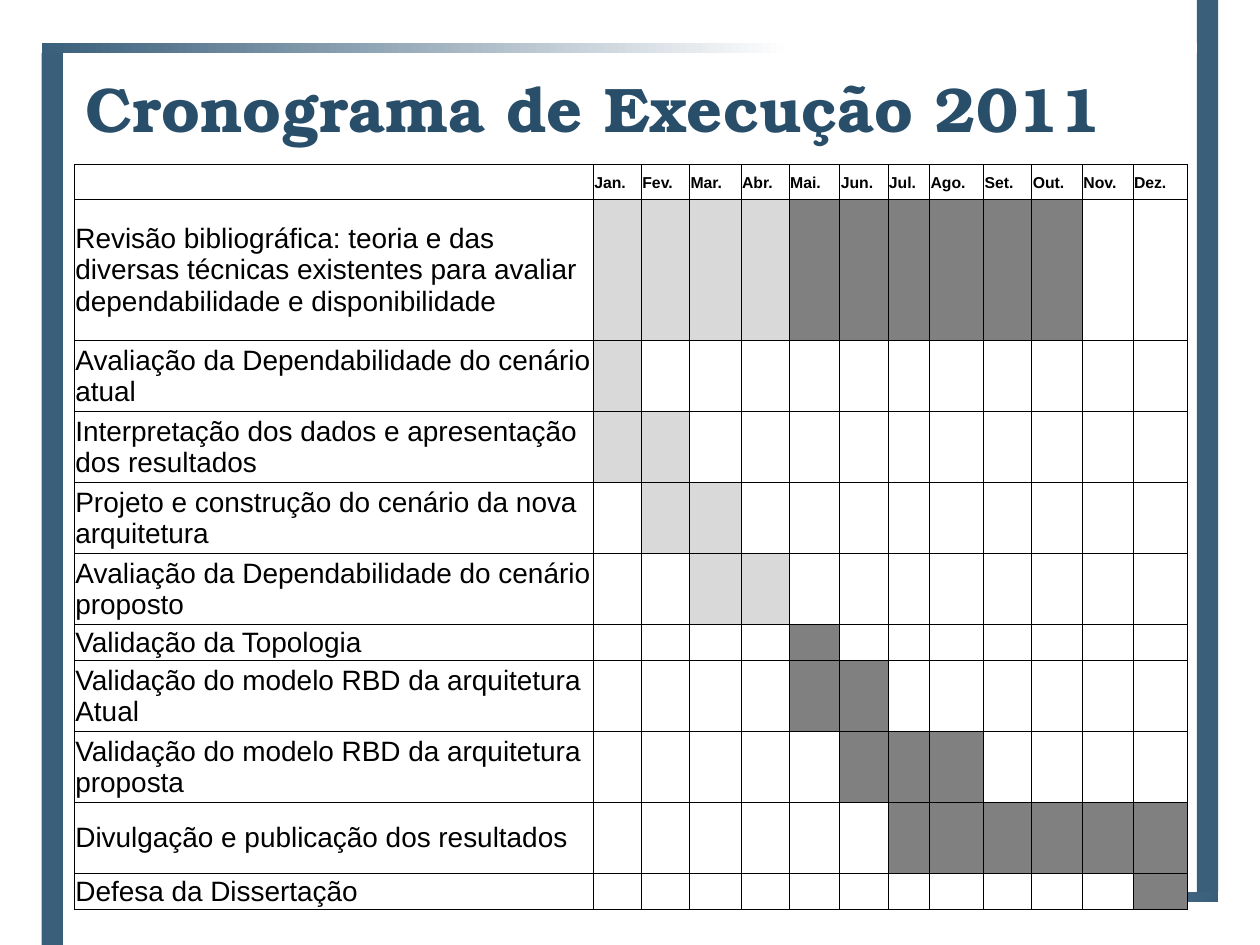
from lxml.etree import SubElement
from pptx import Presentation
from pptx.dml.color import RGBColor
from pptx.enum.shapes import MSO_SHAPE
from pptx.enum.text import MSO_ANCHOR, PP_ALIGN
from pptx.oxml import parse_xml
from pptx.oxml.ns import nsdecls, qn
from pptx.util import Cm, Pt

BLUE = RGBColor(0x3A, 0x5F, 0x7B)
TITLE_BLUE = RGBColor(0x28, 0x4E, 0x6A)
WHITE = RGBColor(0xFF, 0xFF, 0xFF)
BLACK = RGBColor(0x00, 0x00, 0x00)
DONE = RGBColor(0xD9, 0xD9, 0xD9)
PLANNED = RGBColor(0x80, 0x80, 0x80)

TITLE = "Cronograma de Execução 2011"
MONTHS = ["Jan.", "Fev.", "Mar.", "Abr.", "Mai.", "Jun.",
          "Jul.", "Ago.", "Set.", "Out.", "Nov.", "Dez."]
LAST_DONE_MONTH = 4
TASKS = [
    ("Revisão bibliográfica: teoria e das diversas técnicas existentes para "
     "avaliar dependabilidade e disponibilidade", 1, 10, 2.84),
    ("Avaliação da Dependabilidade do cenário atual", 1, 1, 1.43),
    ("Interpretação dos dados e apresentação dos resultados", 1, 2, 1.43),
    ("Projeto e construção do cenário da nova arquitetura", 2, 3, 1.43),
    ("Avaliação da Dependabilidade do cenário proposto", 3, 4, 1.43),
    ("Validação da Topologia", 5, 5, 0.73),
    ("Validação do modelo RBD da arquitetura Atual", 5, 6, 1.43),
    ("Validação do modelo RBD da arquitetura proposta", 6, 8, 1.43),
    ("Divulgação e publicação dos resultados", 7, 12, 1.43),
    ("Defesa da Dissertação", 12, 12, 0.73),
]
HEADER_HEIGHT = 0.7
COLUMN_WIDTHS = [10.46, 0.97, 0.97, 1.04, 0.97, 1.02, 0.97,
                 0.84, 1.09, 0.97, 1.02, 1.02, 1.09]
SIDE_BARS = [(24.13, 0), (0.84, 1.07)]
FADING_BARS = [(1.27, 17.98, 180), (0.84, 0.86, 0)]


def add_bar(page, left, top, width, height, angle=None):
    bar = page.shapes.add_shape(MSO_SHAPE.RECTANGLE, Cm(left), Cm(top),
                                Cm(width), Cm(height))
    bar.shadow.inherit = False
    bar.line.fill.background()
    if angle is None:
        bar.fill.solid()
        bar.fill.fore_color.rgb = BLUE
        return
    bar.fill.gradient()
    bar.fill.gradient_angle = angle
    for stop, color, position in zip(bar.fill.gradient_stops, (BLUE, WHITE), (0, 0.65)):
        stop.color.rgb = color
        stop.position = position


def add_title(page):
    box = page.shapes.title
    box.left, box.top, box.width, box.height = Cm(1.47), Cm(1.27), Cm(22.43), Cm(3)
    frame = box.text_frame
    frame.word_wrap = True
    frame.vertical_anchor = MSO_ANCHOR.TOP
    para = frame.paragraphs[0]
    para.alignment = PP_ALIGN.LEFT
    add_span(para, TITLE, 36, True, "TeX Gyre Bonum", TITLE_BLUE)


def add_span(para, text, size, bold, font="Arial", color=BLACK):
    span = para.add_run()
    span.text = text
    span.font.size = Pt(size)
    span.font.bold = bold
    span.font.name = font
    span.font.color.rgb = color


def format_cell(cell, text, size, bold, color):
    cell.margin_left = cell.margin_top = Cm(0.02)
    cell.margin_right = cell.margin_bottom = 0
    cell.vertical_anchor = MSO_ANCHOR.MIDDLE
    properties = cell._tc.get_or_add_tcPr()
    for side in ("lnL", "lnR", "lnT", "lnB"):
        properties.append(parse_xml(
            f'<a:{side} {nsdecls("a")} w="6350"><a:solidFill>'
            f'<a:srgbClr val="{BLACK}"/></a:solidFill></a:{side}>'))
    cell.fill.solid()
    cell.fill.fore_color.rgb = color
    para = cell.text_frame.paragraphs[0]
    if text:
        add_span(para, text, size, bold)
    else:
        SubElement(para._p, qn("a:endParaRPr"), sz=str(size * 100))


def month_color(month, first, last):
    if not first <= month <= last:
        return WHITE
    return DONE if month <= LAST_DONE_MONTH else PLANNED


def add_schedule(page):
    heights = [HEADER_HEIGHT] + [task[3] for task in TASKS]
    table = page.shapes.add_table(
        len(heights), len(COLUMN_WIDTHS), Cm(1.5), Cm(3.32),
        Cm(sum(COLUMN_WIDTHS)), Cm(sum(heights))).table
    table.first_row = table.horz_banding = False
    for column, width in zip(table.columns, COLUMN_WIDTHS):
        column.width = Cm(width)
    for row, height in zip(table.rows, heights):
        row.height = Cm(height)
    for index, text in enumerate([""] + MONTHS):
        format_cell(table.cell(0, index), text, 9, True, WHITE)
    for row, (task, first, last, height) in enumerate(TASKS, 1):
        format_cell(table.cell(row, 0), task, 16, False, WHITE)
        for month in range(1, len(MONTHS) + 1):
            format_cell(table.cell(row, month), "", 9, False,
                        month_color(month, first, last))


def main():
    deck = Presentation()
    deck.slide_width, deck.slide_height = Cm(25.4), Cm(19.05)
    page = deck.slides.add_slide(deck.slide_layouts[5])
    for left, top in SIDE_BARS:
        add_bar(page, left, top, 0.43, 17.98)
    for left, top, angle in FADING_BARS:
        add_bar(page, left, top, 23.29, 0.21, angle)
    add_title(page)
    add_schedule(page)
    deck.save("out.pptx")


if __name__ == "__main__":
    main()
